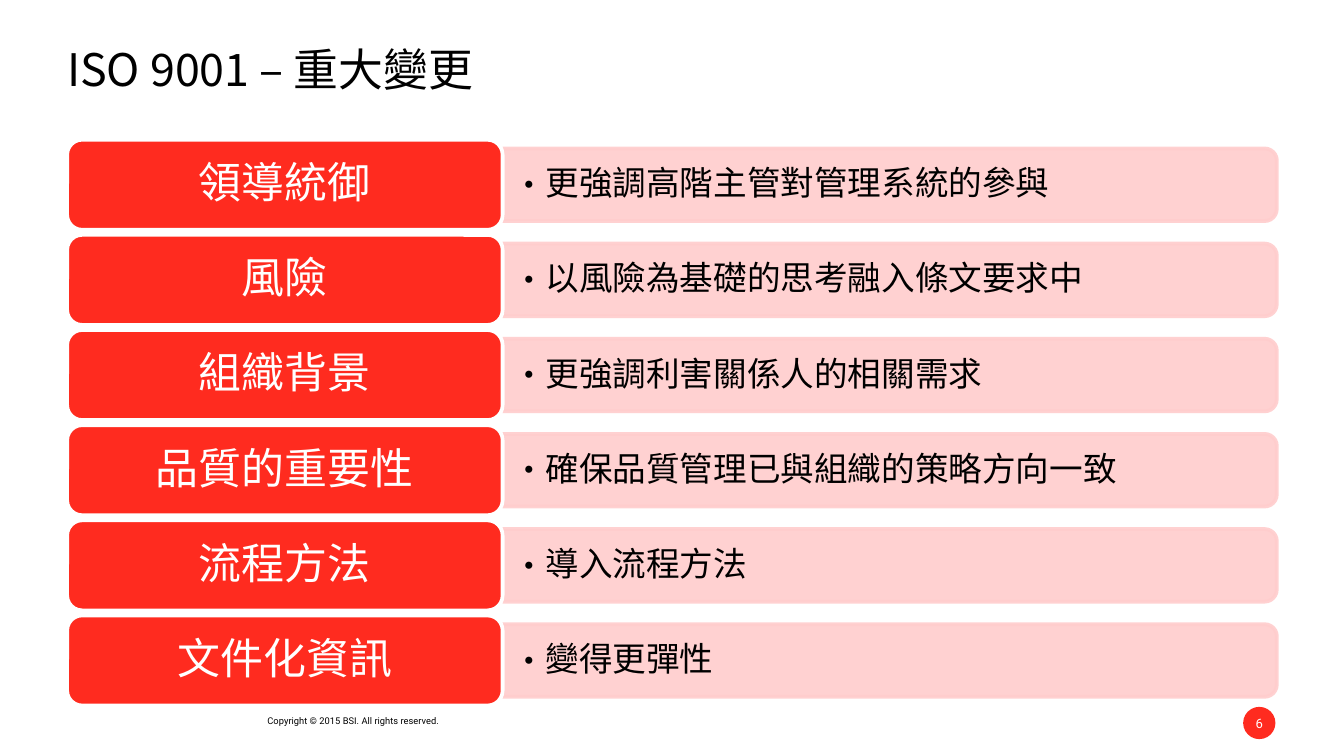
from pptx import Presentation
from pptx.dml.color import RGBColor
from pptx.enum.shapes import MSO_SHAPE
from pptx.enum.text import MSO_ANCHOR, PP_ALIGN
from pptx.oxml.ns import qn
from pptx.util import Inches, Pt
from lxml.etree import SubElement

# Content
TITLE = "ISO 9001 – 重大變更"
CHANGES = [
    ("領導統御", "更強調高階主管對管理系統的參與"),
    ("風險", "以風險為基礎的思考融入條文要求中"),
    ("組織背景", "更強調利害關係人的相關需求"),
    ("品質的重要性", "確保品質管理已與組織的策略方向一致"),
    ("流程方法", "導入流程方法"),
    ("文件化資訊", "變得更彈性"),
]
COPYRIGHT = "Copyright © 2015 BSI. All rights reserved."
PAGE = "6"

# Style and grid, in inches
CJK, LATIN = "Noto Sans CJK SC", "Roboto"
RED, PINK, WHITE, BLACK = "FF2B1F", "FFCDCD", "FFFFFF", "000000"
WIDTH = 10
HEIGHT = WIDTH * 9 / 16
MARGIN = 0.5
CONTENT_W = WIDTH - 2 * MARGIN
LABEL_W = 0.36 * CONTENT_W
BAR_W = CONTENT_W - LABEL_W
BAR_LEFT = MARGIN + LABEL_W
ROWS_TOP, ROWS_BOTTOM, LABEL_H = 1.04, 5.25, 0.67
PITCH = (ROWS_BOTTOM - ROWS_TOP - LABEL_H) / (len(CHANGES) - 1)
BAR_H, POINT_H = 0.54, 0.49

prs = Presentation()
prs.slide_width, prs.slide_height = Inches(WIDTH), Inches(HEIGHT)
slide = prs.slides.add_slide(prs.slide_layouts[6])


def color(value):
    return RGBColor.from_string(value)


def add_block(preset, left, top, width, height, fill, line=None):
    block = slide.shapes.add_shape(
        preset, Inches(left), Inches(top), Inches(width), Inches(height))
    block.shadow.inherit = False
    block.fill.solid()
    block.fill.fore_color.rgb = color(fill)
    if line:
        block.line.color.rgb = color(line)
        block.line.width = Pt(2)
    else:
        block.line.fill.background()
    return block


def add_box(left, top, width, height):
    return slide.shapes.add_textbox(
        Inches(left), Inches(top), Inches(width), Inches(height))


def write(shape, text, size, font, ink, align=PP_ALIGN.LEFT,
          anchor=MSO_ANCHOR.MIDDLE, inset=(0, 0), bullet=None):
    frame = shape.text_frame
    frame.word_wrap = True
    frame.vertical_anchor = anchor
    frame.margin_left = frame.margin_right = Inches(inset[0])
    frame.margin_top = frame.margin_bottom = Inches(inset[1])
    frame.text = text
    paragraph = frame.paragraphs[0]
    paragraph.alignment = align
    if bullet:
        props = paragraph._p.get_or_add_pPr()
        props.set("marL", str(Inches(0.19)))
        props.set("indent", str(-Inches(0.19)))
        SubElement(props, qn("a:buFont"), typeface=font)
        SubElement(props, qn("a:buChar"), char=bullet)
    run = paragraph.runs[0]
    run.font.size, run.font.name = Pt(size), font
    run.font.color.rgb = color(ink)
    SubElement(run._r.get_or_add_rPr(), qn("a:ea"), typeface=font)
    return paragraph


def make_translucent(shape, percent):
    for fill_color in shape._element.spPr.iter(qn("a:srgbClr")):
        SubElement(fill_color, qn("a:alpha"), val=str(percent * 1000))


# Page number and copyright line
page_dot = add_block(MSO_SHAPE.OVAL, 9.25, 5.26, 0.24, 0.24, RED)
write(page_dot, PAGE, 7, LATIN, WHITE, PP_ALIGN.CENTER)
write(add_box(1.99, 5.32, 1.34, 0.08), COPYRIGHT, 5, LATIN, BLACK,
      anchor=MSO_ANCHOR.TOP)

# Title
write(add_box(MARGIN, 0.31, CONTENT_W, 0.39), TITLE, 24, CJK, BLACK,
      anchor=MSO_ANCHOR.TOP)

# One row per change: pink bar, its point, red label
for row, (label, point) in enumerate(CHANGES):
    top = ROWS_TOP + row * PITCH
    middle = top + LABEL_H / 2

    # The bar stands upright and is turned so its round corners face right
    bar = add_block(MSO_SHAPE.ROUND_2_SAME_RECTANGLE,
                    BAR_LEFT + (BAR_W - BAR_H) / 2, middle - BAR_W / 2,
                    BAR_H, BAR_W, PINK, PINK)
    bar.rotation = 90
    make_translucent(bar, 90)

    point_box = add_box(BAR_LEFT, middle - POINT_H / 2, BAR_W, POINT_H)
    write(point_box, point, 18, CJK, BLACK, inset=(0.07, 0.04),
          bullet="•").line_spacing = 0.9

    label_block = add_block(MSO_SHAPE.ROUNDED_RECTANGLE, MARGIN, top,
                            LABEL_W, LABEL_H, RED, WHITE)
    write(label_block, label, 23, CJK, WHITE, PP_ALIGN.CENTER,
          inset=(0.1, 0.05)).line_spacing = 0.9

prs.save("out.pptx")
